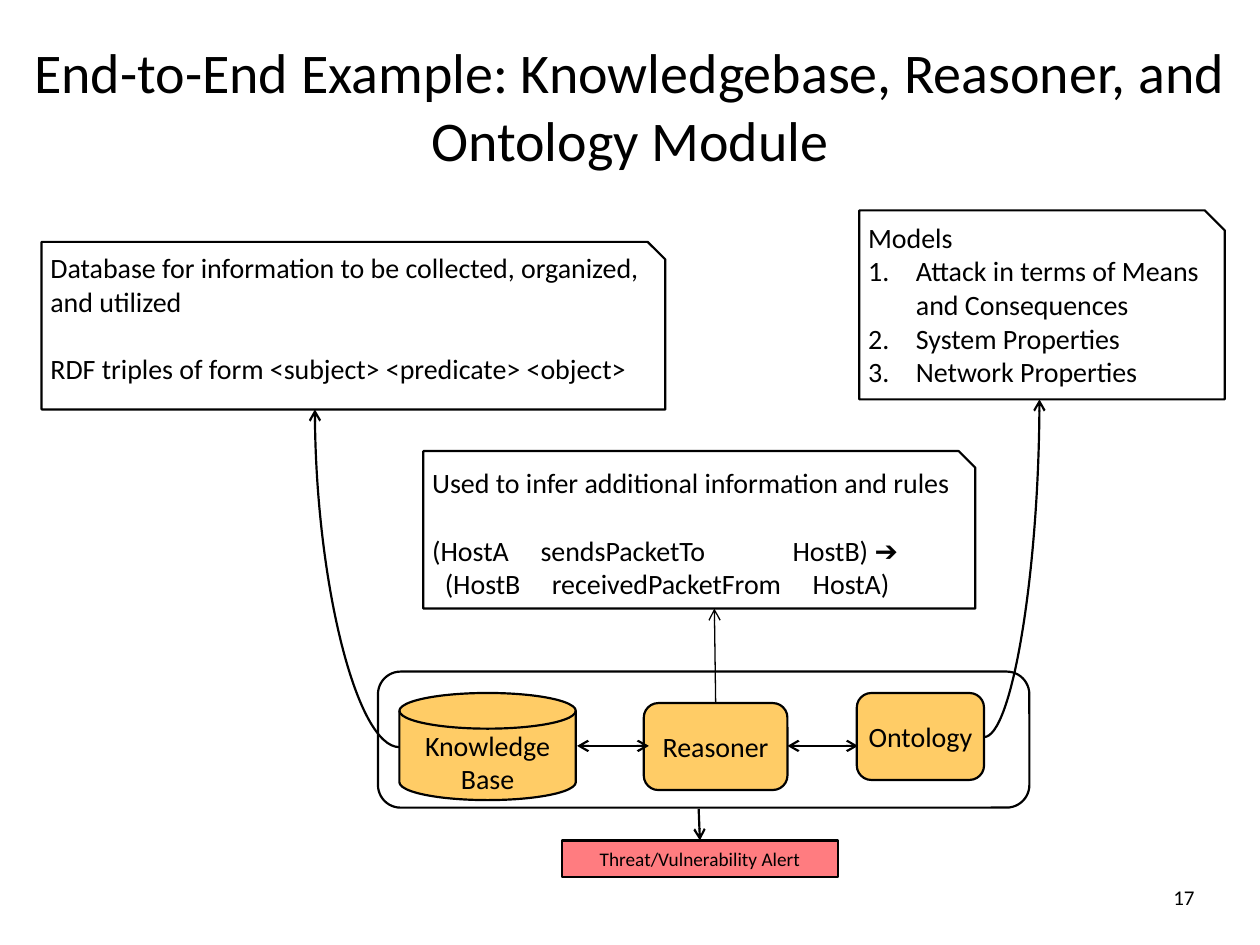
from lxml import etree
from pptx import Presentation
from pptx.dml.color import RGBColor
from pptx.enum import shapes, text
from pptx.oxml import ns
from pptx.util import Inches, Pt

SHAPE = shapes.MSO_SHAPE
LINE, CURVE = shapes.MSO_CONNECTOR.STRAIGHT, shapes.MSO_CONNECTOR.CURVE
CENTER, LEFT, RIGHT = text.PP_ALIGN.CENTER, text.PP_ALIGN.LEFT, text.PP_ALIGN.RIGHT
TOP, MIDDLE = text.MSO_ANCHOR.TOP, text.MSO_ANCHOR.MIDDLE
BLACK, AMBER, RED = "000000", "FFCC66", "FF7C80"


def color(hex_string):
    return RGBColor.from_string(hex_string)


def sub(parent, tag, **attrs):
    return etree.SubElement(parent, ns.qn(tag), {k: str(v) for k, v in attrs.items()})


def place(sp, box):
    sp.left, sp.top, sp.width, sp.height = (Inches(v) for v in box)


def write(sp, content, size, align=CENTER, anchor=MIDDLE, insets=(0, 0, 0, 0), wrap=True):
    """Fill a shape with text; insets run left, top, right, bottom."""
    tf = sp.text_frame
    tf.text = content
    tf.word_wrap = wrap
    tf.auto_size = text.MSO_AUTO_SIZE.NONE
    tf.vertical_anchor = anchor
    tf.margin_left, tf.margin_top, tf.margin_right, tf.margin_bottom = (
        Inches(v) for v in insets)
    for p in tf.paragraphs:
        p.alignment = align
        for r in p.runs:
            r.font.size, r.font.name = Pt(size), "Calibri"
            r.font.color.rgb = color(BLACK)
    return tf.paragraphs


def outlined(slide, kind, box, fill=None):
    sp = slide.shapes.add_shape(kind, *(Inches(v) for v in box))
    sp.shadow.inherit = False
    if fill:
        sp.fill.solid()
        sp.fill.fore_color.rgb = color(fill)
    else:
        sp.fill.background()
    sp.line.color.rgb = color(BLACK)
    sp.line.width = Pt(1.25)
    return sp


def arrow(slide, start, end, kind=LINE, both=False, width=1.25):
    cx = slide.shapes.add_connector(kind, *(Inches(v) for v in start + end))
    cx.line.color.rgb = color(BLACK)
    cx.line.width = Pt(width)
    sp_pr = cx._element.spPr
    if kind == CURVE:
        # A quarter bend leaves sideways and arrives upright.
        sp_pr.find(ns.qn("a:prstGeom")).set("prst", "curvedConnector2")
    ln = cx.line._get_or_add_ln()
    if both:
        sub(ln, "a:headEnd", type="arrow")
    sub(ln, "a:tailEnd", type="arrow")
    sub(sp_pr, "a:effectLst")


def note(slide, box, lines, top_inset=0):
    sp = outlined(slide, SHAPE.SNIP_1_RECTANGLE, box)
    sp.adjustments[0] = 0.105
    return write(sp, "\n".join(lines), 16, LEFT, TOP, (0.07, top_inset, 0, 0))


def number(p):
    p_pr = p._p.get_or_add_pPr()
    p_pr.set("marL", str(Inches(0.38)))
    p_pr.set("indent", str(-Inches(0.38)))
    sub(p_pr, "a:buFont", typeface="+mj-lt")
    sub(p_pr, "a:buAutoNum", type="arabicPeriod")


def set_tabs(p, stops):
    tabs = sub(p._p.get_or_add_pPr(), "a:tabLst")
    for stop in stops:
        sub(tabs, "a:tab", pos=Inches(stop), algn="l")


def heading(slide, box):
    place(slide.shapes.title, box)
    write(slide.shapes.title,
          "End-to-End Example: Knowledgebase, Reasoner, and Ontology Module",
          32, anchor=TOP, insets=(0.2, 0.05, 0.2, 0.05))


def notes(slide):
    database = note(slide, (0.33, 1.92, 4.95, 1.33), [
        "Database for information to be collected, organized, and utilized",
        "RDF triples of form <subject> <predicate> <object>"])
    database[1].space_before = Pt(19.5)

    models = note(slide, (6.82, 1.67, 2.9, 1.5), [
        "Models", "Attack in terms of Means and Consequences",
        "System Properties", "Network Properties"])
    for p in models[1:]:
        number(p)

    rules = note(slide, (3.36, 3.58, 4.38, 1.25), [
        "Used to infer additional information and rules",
        "(HostA\tsendsPacketTo\tHostB) ➔",
        "\t(HostB\treceivedPacketFrom\tHostA)"], top_inset=0.05)
    rules[1].space_before = Pt(19.5)
    set_tabs(rules[1], (0.86, 2.86))
    set_tabs(rules[2], (0.1, 0.95, 3.02))


def module(slide, box):
    """Frame holding the three linked parts, with arrows to their notes."""
    x, y = box[:2]
    outlined(slide, SHAPE.ROUNDED_RECTANGLE, box)
    disk = outlined(slide, SHAPE.FLOWCHART_MAGNETIC_DISK,
                    (x + 0.17, y + 0.17, 1.4, 0.85), AMBER)
    write(disk, "Knowledge Base", 16, insets=(0.1, 0.15, 0.1, 0.05))
    for label, dx, dy, width in (("Reasoner", 2.11, 0.25, 1.14),
                                 ("Ontology", 3.8, 0.17, 1.01)):
        sp = outlined(slide, SHAPE.FLOWCHART_ALTERNATE_PROCESS,
                      (x + dx, y + dy, width, 0.69), AMBER)
        write(sp, label, 16, wrap=False)

    for left, right in ((1.58, 2.15), (3.25, 3.81)):
        arrow(slide, (x + left, y + 0.59), (x + right, y + 0.59), both=True)
    arrow(slide, (x + 0.17, y + 0.6), (2.5, 3.25), CURVE)
    arrow(slide, (x + 4.81, y + 0.52), (8.25, 3.17), CURVE)
    arrow(slide, (x + 2.68, y + 0.25), (5.67, 4.83), width=0.75)


def alert(slide, box):
    x, y, width, _ = box
    sp = outlined(slide, SHAPE.RECTANGLE, box, RED)
    write(sp, "Threat/Vulnerability Alert", 11)
    arrow(slide, (x + width / 2 - 0.01, y - 0.25), (x + width / 2, y))


def page_number(slide, box):
    sp = slide.shapes.add_textbox(*(Inches(v) for v in box))
    write(sp, "17", 12, RIGHT, insets=(0.1, 0.05, 0.1, 0.05))


def main():
    prs = Presentation()
    prs.slide_width, prs.slide_height = Inches(10), Inches(7.5)
    slide = prs.slides.add_slide(prs.slide_layouts[5])
    heading(slide, (0, 0.25, 10, 1.18))
    notes(slide)
    module(slide, (3, 5.33, 5.17, 1.08))
    alert(slide, (4.46, 6.67, 2.19, 0.29))
    page_number(slide, (7.25, 6.92, 2.33, 0.4))
    prs.save("out.pptx")


if __name__ == "__main__":
    main()
